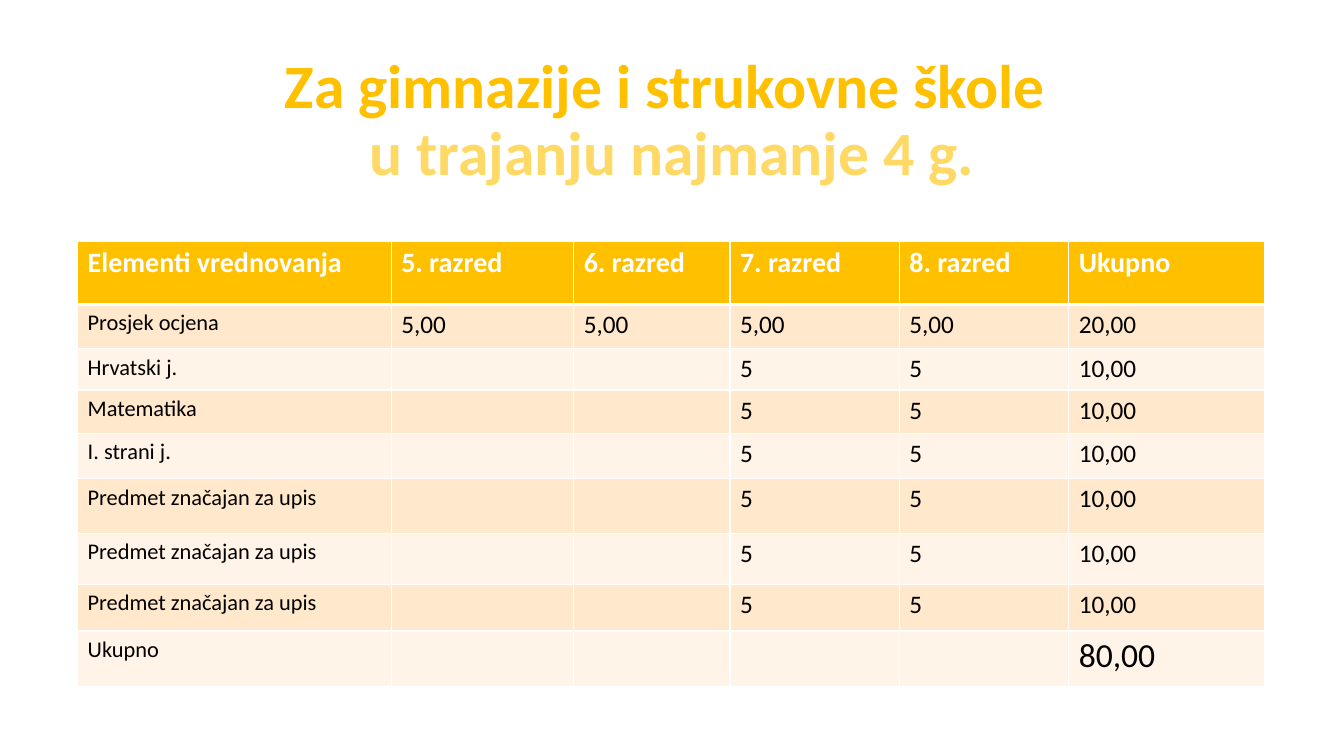
from dataclasses import dataclass

from lxml import etree
from pptx import Presentation
from pptx import util as u
from pptx.dml.color import RGBColor
from pptx.enum import text
from pptx.oxml.ns import qn


@dataclass(frozen=True)
class Theme:
    """Colours, font and type sizes of the slide."""
    font: str = "Calibri"
    gold: str = "FFC000"
    pale_gold: str = "FFD966"
    white: str = "FFFFFF"
    black: str = "000000"
    bands: tuple = ("FFE8CC", "FFF4E7")
    title_size: int = 44
    header_size: int = 20
    label_size: int = 16
    value_size: int = 18
    total_size: int = 24


THEME = Theme()
SUBJECT_POINTS = ["", "", "5", "5", "10,00"]
SUBJECTS = ["Hrvatski j.", "Matematika", "I. strani j."] + ["Predmet značajan za upis"] * 3
ROWS = [
    ["Elementi vrednovanja", *[f"{grade}. razred" for grade in range(5, 9)], "Ukupno"],
    ["Prosjek ocjena", *["5,00"] * 4, "20,00"],
    *[[subject, *SUBJECT_POINTS] for subject in SUBJECTS],
    ["Ukupno", *[""] * 4, "80,00"],
]
COLUMN_WIDTHS = [311, 181, 155, 168, 168, 194]
ROW_HEIGHTS = [63, 44, 41, 43, 45, 54, 51, 46, 55]


def px(length):
    """Turn px, a hundred to the inch, into EMU."""
    return u.Emu(length * 9144)


def style_font(font, size, color, bold=False):
    """Apply the theme font with a size, colour and weight."""
    font.name = THEME.font
    font.size = u.Pt(size)
    font.bold = bold
    font.color.rgb = RGBColor.from_string(color)


def add_title(slide, left, top, width, height):
    """Add the centred two-tone title in its box."""
    frame = slide.shapes.add_textbox(px(left), px(top), px(width), px(height)).text_frame
    frame.word_wrap = True
    frame.vertical_anchor = text.MSO_ANCHOR.MIDDLE
    paragraph = frame.paragraphs[0]
    paragraph.alignment = text.PP_ALIGN.CENTER
    paragraph.line_spacing = 0.9
    first = paragraph.add_run()
    first.text = "Za gimnazije i strukovne škole "
    style_font(first.font, THEME.title_size, THEME.gold, True)
    paragraph.add_line_break()
    second = paragraph.add_run()
    second.text = "u trajanju najmanje 4 g."
    style_font(second.font, THEME.title_size, THEME.pale_gold, True)


def add_borders(cell, top, bottom):
    """Draw white cell borders, with top and bottom widths in points."""
    properties = cell._tc.get_or_add_tcPr()
    for side, points in (("L", 1), ("R", 1), ("T", top), ("B", bottom)):
        line = etree.SubElement(properties, qn(f"a:ln{side}"), w=str(u.Pt(points)))
        fill = etree.SubElement(line, qn("a:solidFill"))
        etree.SubElement(fill, qn("a:srgbClr"), val=THEME.white)


def cell_style(row, column):
    """Return the type size, text colour, weight and fill of a cell."""
    if row == 0:
        return THEME.header_size, THEME.white, True, THEME.gold
    size = THEME.label_size if column == 0 else THEME.value_size
    if row == len(ROWS) - 1 and column == len(COLUMN_WIDTHS) - 1:
        size = THEME.total_size
    return size, THEME.black, False, THEME.bands[(row - 1) % 2]


def add_points_table(slide, left, top):
    """Add the table of points with its top left corner at the given place."""
    frame = slide.shapes.add_table(
        len(ROWS), len(COLUMN_WIDTHS), px(left), px(top),
        px(sum(COLUMN_WIDTHS)), px(sum(ROW_HEIGHTS)))
    table = frame.table
    for column, width in zip(table.columns, COLUMN_WIDTHS):
        column.width = px(width)
    for row, height in zip(table.rows, ROW_HEIGHTS):
        row.height = px(height)
    for row, values in enumerate(ROWS):
        for column, value in enumerate(values):
            cell = table.cell(row, column)
            size, color, bold, fill = cell_style(row, column)
            add_borders(cell, 3 if row == 1 else 1, 3 if row == 0 else 1)
            cell.fill.solid()
            cell.fill.fore_color.rgb = RGBColor.from_string(fill)
            cell.text = value
            style_font(cell.text_frame.paragraphs[0].font, size, color, bold)


def main():
    """Build and save the slide."""
    presentation = Presentation()
    presentation.slide_width = px(1333)
    presentation.slide_height = px(750)
    slide = presentation.slides.add_slide(presentation.slide_layouts[6])
    add_title(slide, 92, 40, 1150, 162)
    add_points_table(slide, 77, 239)
    presentation.save("out.pptx")


if __name__ == "__main__":
    main()
